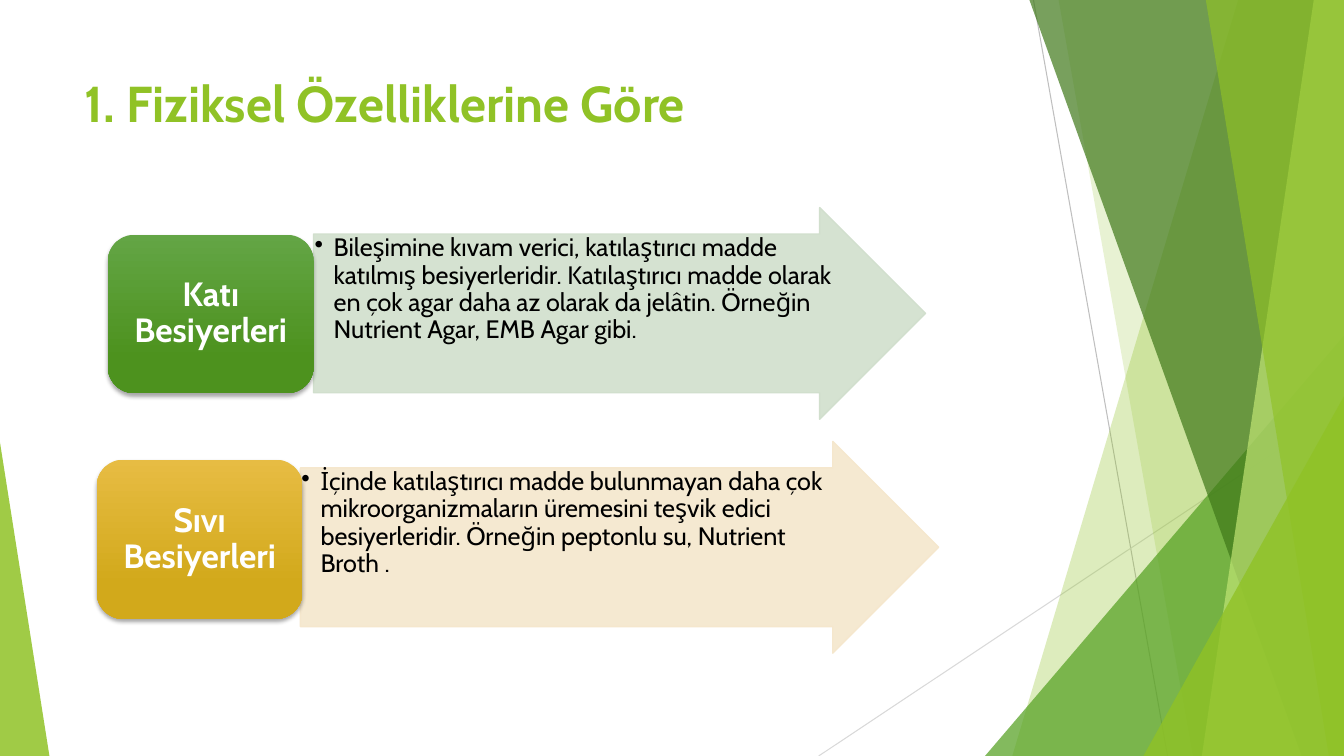
from lxml import etree
from pptx import Presentation
from pptx.dml.color import RGBColor
from pptx.enum.shapes import MSO_CONNECTOR as CONN, MSO_SHAPE as SHAPE
from pptx.enum.text import MSO_ANCHOR as ANCHOR, PP_ALIGN as ALIGN
from pptx.oxml.ns import qn
from pptx.util import Inches, Pt

GREEN = "90C226"
LINES = [
    ((10.25, 0), (11.58, 7.5), "BFBFBF"),
    ((13.33, 4.03), (8.12, 7.5), "D9D9D9"),
]
BACK_BANDS = [(12.28, 10.04, GREEN, 30), (10.5, 11.83, GREEN, 20)]
FRONT_BANDS = [
    (10.21, 12.91, "3F7819", 70),
    (13.03, 11.92, "C0E474", 70),
    (11.96, 13.18, GREEN, 65),
]
BACK_TRIANGLE = ((9.77, 3.33, 3.56, 4.17), 1, "54A021", 72)
FRONT_TRIANGLES = [
    ((11.34, 3.93, 1.99, 3.57), 1, GREEN, 80),
    ((0, 4.39, 0.49, 3.11), 0, GREEN, 85),
]
MEDIA = [
    ("Katı Besiyerleri", (1.07, 2.33, 2.04, 1.57), ("63A545", "4D921E"),
     "Bileşimine kıvam verici, katılaştırıcı madde katılmış besiyerleridir. "
     "Katılaştırıcı madde olarak en çok agar daha az olarak da jelâtin. "
     "Örneğin Nutrient Agar, EMB Agar gibi.",
     (3.11, 2.06, 6.07, 2.1), 5.28, "D1DFCD"),
    ("Sıvı Besiyerleri", (0.96, 4.56, 2.04, 1.58), ("E7BC43", "D2A91B"),
     "İçinde katılaştırıcı madde bulunmayan daha çok mikroorganizmaların "
     "üremesini teşvik edici besiyerleridir. "
     "Örneğin peptonlu su, Nutrient Broth .",
     (2.98, 4.38, 6.33, 2.1), 5.54, "F5E7CD"),
]


def rgb(color):
    """Turn a hex string into a colour."""
    return RGBColor.from_string(color)


def box(left, top, width, height):
    """Give a box in inches as four lengths."""
    return [Inches(v) for v in (left, top, width, height)]


def set_attrs(obj, values):
    """Set attributes from a dict."""
    for name, value in values.items():
        setattr(obj, name, value)


def fill_solid(sp, color, alpha):
    """Fill a shape with a see-through colour, without line or shadow."""
    sp.shadow.inherit = False
    sp.fill.solid()
    sp.fill.fore_color.rgb = rgb(color)
    sp.line.fill.background()
    clr = sp.fill._xPr.find(qn("a:solidFill"))[0]
    etree.SubElement(clr, qn("a:alpha"), val=str(alpha * 1000))


def add_line(slide, start, end, color):
    """Draw a thin straight line."""
    points = [Inches(v) for v in start + end]
    cx = slide.shapes.add_connector(CONN.STRAIGHT, *points)
    cx.line.color.rgb = rgb(color)
    cx.line.width = Pt(0.75)
    etree.SubElement(cx._element.spPr, qn("a:effectLst"))


def add_band(slide, top_x, bottom_x, color, alpha):
    """Draw a full-height band reaching the right edge."""
    fb = slide.shapes.build_freeform(Inches(top_x), 0, 1.0)
    corners = [(13.33, 0), (13.33, 7.5), (bottom_x, 7.5)]
    fb.add_line_segments([(Inches(x), Inches(y)) for x, y in corners])
    fill_solid(fb.convert_to_shape(), color, alpha)


def add_triangle(slide, place, tip, color, alpha):
    """Draw a right-angled triangle with its tip at one side."""
    sp = slide.shapes.add_shape(SHAPE.ISOSCELES_TRIANGLE, *box(*place))
    sp.adjustments[0] = tip
    fill_solid(sp, color, alpha)


def write(tf, text, size, color, bold=False, align=ALIGN.LEFT, spacing=None):
    """Write one paragraph and return it."""
    p = tf.paragraphs[0]
    set_attrs(p, {"alignment": align, "line_spacing": spacing})
    r = p.add_run()
    r.text = text
    set_attrs(r.font, {"name": "Cabin", "size": Pt(size), "bold": bold})
    r.font.color.rgb = rgb(color)
    return p


def add_arrow(slide, place, text_width, color, text):
    """Draw a wide arrow with a bulleted text on its shaft."""
    sp = slide.shapes.add_shape(SHAPE.RIGHT_ARROW, *box(*place))
    sp.adjustments[0] = 0.75
    sp.adjustments[1] = 0.5
    fill_solid(sp, color, 90)
    sp.line.color.rgb = rgb(color)
    sp.line.width = Pt(1)
    left, top, _, height = place
    shaft = box(left, top + height / 8, text_width, height * 0.75)
    tf = slide.shapes.add_textbox(*shaft).text_frame
    sides = ("left", "top", "right", "bottom")
    set_attrs(tf, {f"margin_{side}": Inches(0.01) for side in sides})
    tf.word_wrap = True
    pPr = write(tf, text, 18, "000000", spacing=0.9)._p.get_or_add_pPr()
    pPr.set("marL", str(Inches(0.19)))
    pPr.set("indent", str(Inches(-0.19)))
    etree.SubElement(pPr, qn("a:buChar"), char="•")


def add_label(slide, place, colors, text):
    """Draw a rounded gradient box with a soft shadow and a bold name."""
    sp = slide.shapes.add_shape(SHAPE.ROUNDED_RECTANGLE, *box(*place))
    sp.line.fill.background()
    sp.fill.gradient()
    sp.fill.gradient_angle = 270
    for stop, color, position in zip(sp.fill.gradient_stops, colors, (0, 0.78)):
        stop.color.rgb = rgb(color)
        stop.position = position
    sp.shadow.inherit = False
    effects = sp._element.spPr.find(qn("a:effectLst"))
    shadow = etree.SubElement(effects, qn("a:outerShdw"), blurRad=str(Pt(3)),
                              dist=str(Pt(2)), dir="5400000", rotWithShape="0")
    clr = etree.SubElement(shadow, qn("a:srgbClr"), val="000000")
    etree.SubElement(clr, qn("a:alpha"), val="35000")
    tf = sp.text_frame
    set_attrs(tf, {"word_wrap": True, "vertical_anchor": ANCHOR.MIDDLE})
    write(tf, text, 24, "FFFFFF", True, ALIGN.CENTER, 0.9)


def add_title(slide, text):
    """Place and format the title."""
    title = slide.shapes.title
    names = ("left", "top", "width", "height")
    set_attrs(title, dict(zip(names, box(0.74, 0.67, 9.4, 1.44))))
    title.text_frame.vertical_anchor = ANCHOR.TOP
    write(title.text_frame, text, 36, GREEN, True)


def add_decoration(slide):
    """Draw the lines, bands and triangles at the slide's edges."""
    for line in LINES:
        add_line(slide, *line)
    for band in BACK_BANDS:
        add_band(slide, *band)
    add_triangle(slide, *BACK_TRIANGLE)
    for band in FRONT_BANDS:
        add_band(slide, *band)
    for triangle in FRONT_TRIANGLES:
        add_triangle(slide, *triangle)


def main():
    """Build the slide and save it."""
    prs = Presentation()
    set_attrs(prs, {"slide_width": Inches(13.33), "slide_height": Inches(7.5)})
    slide = prs.slides.add_slide(prs.slide_layouts[5])
    add_decoration(slide)
    add_title(slide, "1. Fiziksel Özelliklerine Göre")
    for name, label, colors, text, arrow, text_width, tint in MEDIA:
        add_arrow(slide, arrow, text_width, tint, text)
        add_label(slide, label, colors, name)
    prs.save("out.pptx")


if __name__ == "__main__":
    main()
